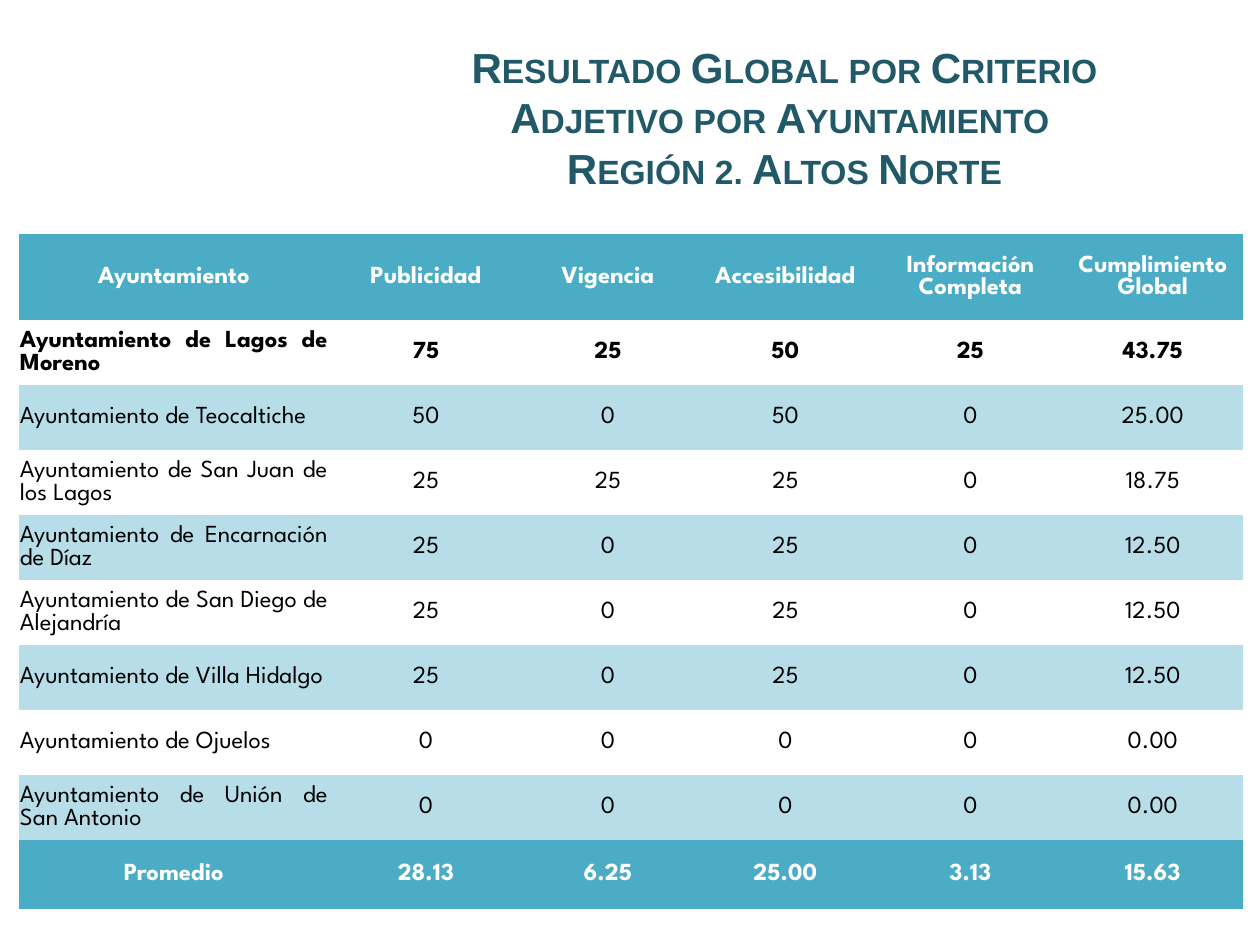
from pptx import Presentation, util as u
from pptx.dml.color import RGBColor
from pptx.enum import text as t

# Content
TITLE = "Resultado Global por Criterio Adjetivo por Ayuntamiento \nRegión 2. Altos Norte"
HEAD = ["Ayuntamiento", "Publicidad", "Vigencia", "Accesibilidad",
        "Información\nCompleta", "Cumplimiento Global"]
TOWNS = [
    ("Lagos de Moreno", "75", "25", "50", "25", "43.75"),
    ("Teocaltiche", "50", "0", "50", "0", "25.00"),
    ("San Juan de los Lagos", "25", "25", "25", "0", "18.75"),
    ("Encarnación de Díaz", "25", "0", "25", "0", "12.50"),
    ("San Diego de Alejandría", "25", "0", "25", "0", "12.50"),
    ("Villa Hidalgo", "25", "0", "25", "0", "12.50"),
    ("Ojuelos", "0", "0", "0", "0", "0.00"),
    ("Unión de San Antonio", "0", "0", "0", "0", "0.00"),
]
MEAN = ["Promedio", "28.13", "6.25", "25.00", "3.13", "15.63"]

# Theme and layout, lengths in px
THEME = dict(title="215968", band="4BACC6", stripe="B7DEE8", ink="000000",
             light="FFFFFF", head_font="Arial", body_font="League Spartan",
             head_size=24, body_size=14)
NO_GRID = "{2D5ABB26-0587-4C30-8999-92F81FD0307C}"
COLS = [310, 194, 170, 185, 185, 180]
ROWS = [86] + [65] * len(TOWNS) + [69]


def px(n):
    return u.Inches(n / 126)


def style(par, font, size, color, bold, align):
    par.alignment = align
    par.font.name = THEME[font]
    par.font.size = u.Pt(THEME[size])
    par.font.color.rgb = RGBColor.from_string(THEME[color])
    par.font.bold = bold


def put(cell, words, fill, color, bold, align):
    cell.margin_left = cell.margin_right = cell.margin_top = px(1)
    cell.margin_bottom = 0
    cell.vertical_anchor = t.MSO_ANCHOR.MIDDLE
    if fill:
        cell.fill.solid()
        cell.fill.fore_color.rgb = RGBColor.from_string(THEME[fill])
    else:
        cell.fill.background()
    par = cell.text_frame.paragraphs[0]
    par.text = words
    style(par, "body_font", "body_size", color, bold, align)


def main():
    deck = Presentation()
    deck.slide_width, deck.slide_height = px(1260), px(945)
    slide = deck.slides.add_slide(deck.slide_layouts[5])

    # Title in small capitals
    title = slide.shapes.title
    title.left, title.top, title.width, title.height = map(px, (372, 38, 825, 158))
    frame = title.text_frame
    frame.word_wrap = True
    frame.auto_size = t.MSO_AUTO_SIZE.NONE
    frame.vertical_anchor = t.MSO_ANCHOR.MIDDLE
    par = frame.paragraphs[0]
    par.text = TITLE
    style(par, "head_font", "head_size", "title", True, t.PP_ALIGN.CENTER)
    for run in par.runs:
        run.font._element.set("cap", "small")

    # Table frame
    rows = [HEAD] + [("Ayuntamiento de " + name, *vals) for name, *vals in TOWNS] + [MEAN]
    table = slide.shapes.add_table(len(rows), len(COLS), px(19), px(234),
                                   px(sum(COLS)), px(sum(ROWS))).table
    table._tbl.tblPr[0].text = NO_GRID
    for col, wide in zip(table.columns, COLS):
        col.width = px(wide)
    for row, high in zip(table.rows, ROWS):
        row.height = px(high)

    # Cells: coloured ends, striped towns, leading town in bold
    for r, row in enumerate(rows):
        end = r in (0, len(rows) - 1)
        fill = "band" if end else "stripe" if r % 2 == 0 else None
        for c, words in enumerate(row):
            align = t.PP_ALIGN.JUSTIFY if c == 0 and not end else t.PP_ALIGN.CENTER
            put(table.cell(r, c), words, fill, "light" if end else "ink",
                end or r == 1, align)

    deck.save("out.pptx")


if __name__ == "__main__":
    main()
